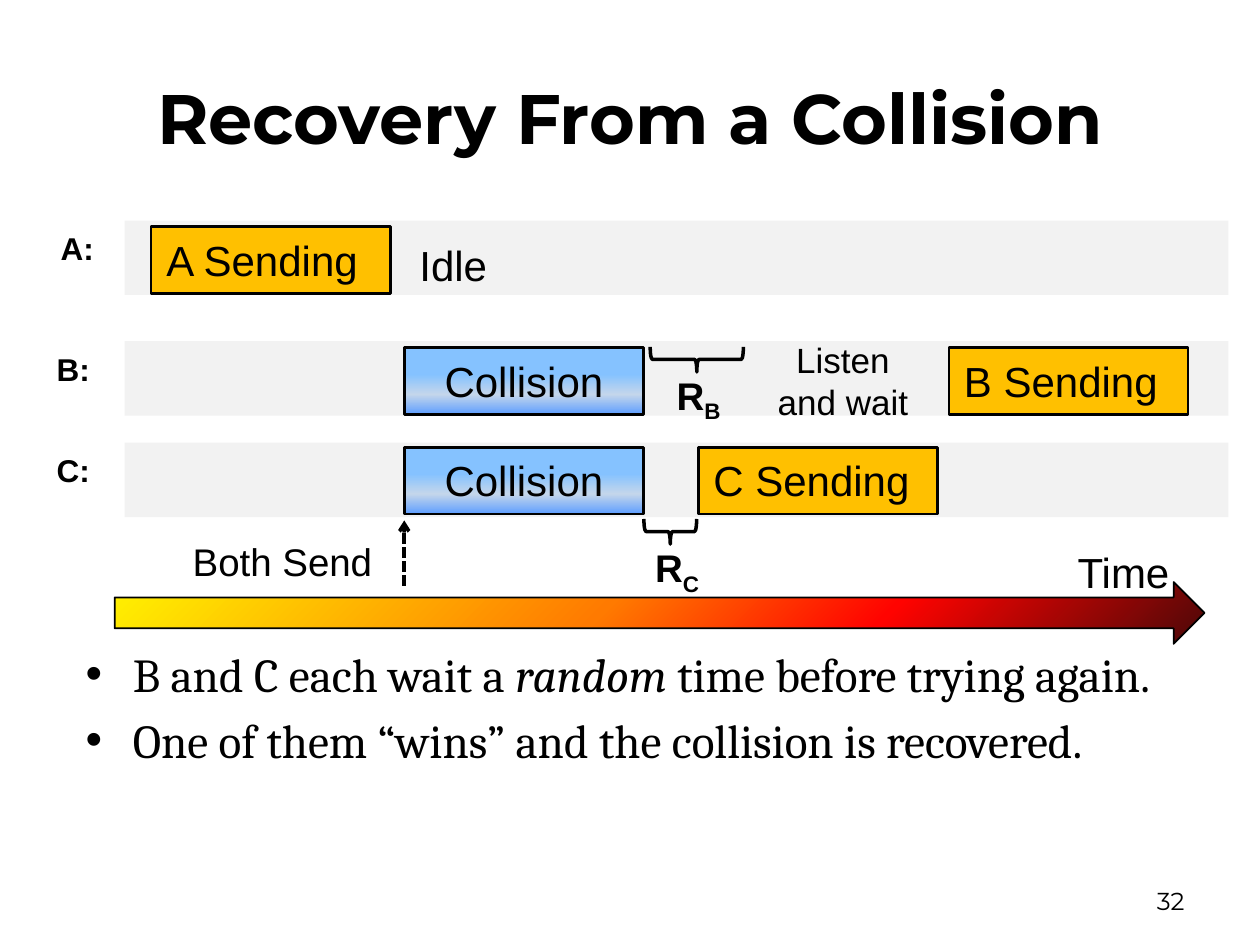
from lxml import etree
from pptx import Presentation
from pptx.dml.color import RGBColor
from pptx.enum.dml import MSO_LINE
from pptx.enum.shapes import MSO_CONNECTOR, MSO_SHAPE
from pptx.enum.text import MSO_ANCHOR, PP_ALIGN
from pptx.oxml.ns import qn
from pptx.util import Pt

LEFT, CENTER, RIGHT = PP_ALIGN.LEFT, PP_ALIGN.CENTER, PP_ALIGN.RIGHT
TOP, MIDDLE = MSO_ANCHOR.TOP, MSO_ANCHOR.MIDDLE
RECTANGLE, ARROW, BRACE = MSO_SHAPE.RECTANGLE, MSO_SHAPE.RIGHT_ARROW, MSO_SHAPE.RIGHT_BRACE

THEME = {
    "title_font": "Montserrat", "body_font": "Cambria", "label_font": "Arial",
    "title": 40, "body": 27, "box": 24, "note": 22, "wait": 20, "row": 18, "number": 14,
    "ink": "000000", "lane": "F2F2F2", "sending": "FFC000",
    "collision": [(40, "85C2FF"), (70, "C4D6EB"), (100, "5E9EFF")],
    "time": [(0, "FFF200"), (45, "FF7A00"), (70, "FF0300"), (100, "4D0808")],
}

TITLE = "Recovery From a Collision"
# Station, label left, lane top, box top, boxes as (left, text, kind)
STATIONS = [
    ("A:", 26, 126, 129.6, [(86.4, "A Sending", "sending")]),
    ("B:", 23.8, 195, 198.7, [(231, "Collision", "collision"), (542.2, "B Sending", "sending")]),
    ("C:", 23.8, 253, 255.6, [(231, "Collision", "collision"), (399, "C Sending", "sending")]),
]
# Runs (text, style), left, top, width, height, size, alignment
NOTES = [
    ([("Idle", "")], 231, 132.5, 75.6, 38, "box", LEFT),
    ([("Listen and wait", "")], 428.4, 189.4, 106.6, 57.6, "wait", CENTER),
    ([("Both Send", "")], 101.5, 303, 197.3, 35.3, "note", LEFT),
    ([("R", "bold"), ("B", "subscript")], 378, 208, 53.3, 35.3, "note", LEFT),
    ([("R", "bold"), ("C", "subscript")], 365.8, 306.7, 53.3, 35.3, "note", LEFT),
]
# Horizontal span and top of each waiting time
WAITS = [(371.5, 53.3, 198.2), (367.9, 30.2, 296.6)]
BULLETS = [
    [("B and C each wait a ", ""), ("random", "italic"), (" time before trying again.", "")],
    [("One of them “wins” and the collision is recovered.", "")],
]
LANE_LEFT, LANE_WIDTH, LANE_HEIGHT = 71.3, 630.7, 42.5
BOX_WIDTH, BOX_HEIGHT = 136.8, 38.2
BRACE_DEPTH = 14.4
WIDE_INSETS, NORMAL_INSETS = (8.64, 4.32), (7.2, 3.6)


def color(value):
    return RGBColor.from_string(value)


def fill_gradient(shape, stops, clockwise_angle):
    shape.fill.gradient()
    shape.fill.gradient_angle = 360 - clockwise_angle
    stop_list = next(shape._element.iter(qn("a:gsLst")))
    for old_stop in list(stop_list):
        stop_list.remove(old_stop)
    for percent, value in stops:
        stop = etree.SubElement(stop_list, qn("a:gs"), pos=str(percent * 1000))
        etree.SubElement(stop, qn("a:srgbClr"), val=value)


def set_line(shape, width):
    shape.line.color.rgb = color(THEME["ink"])
    shape.line.width = Pt(width)


def add_shape(slide, kind, left, top, width, height):
    shape = slide.shapes.add_shape(kind, Pt(left), Pt(top), Pt(width), Pt(height))
    shape.shadow.inherit = False
    return shape


def write_paragraph(paragraph, runs, font, size, alignment=LEFT):
    paragraph.alignment = alignment
    paragraph.font.name = THEME[font]
    paragraph.font.size = Pt(THEME[size])
    paragraph.font.color.rgb = color(THEME["ink"])
    for text, style in runs:
        run = paragraph.add_run()
        run.text = text
        if style == "italic":
            run.font.italic = True
        elif style:
            run.font.bold = True
        if style == "subscript":
            run.font._element.set("baseline", "-25000")


def set_frame(frame, insets, anchor):
    frame.word_wrap = True
    frame.vertical_anchor = anchor
    frame.margin_left = frame.margin_right = Pt(insets[0])
    frame.margin_top = frame.margin_bottom = Pt(insets[1])


def add_text(slide, runs, left, top, width, height, size, alignment=LEFT,
             font="label_font", insets=WIDE_INSETS, anchor=TOP):
    box = slide.shapes.add_textbox(Pt(left), Pt(top), Pt(width), Pt(height))
    set_frame(box.text_frame, insets, anchor)
    write_paragraph(box.text_frame.paragraphs[0], runs, font, size, alignment)


def add_title(slide):
    title = slide.shapes.title
    title.left, title.top, title.width, title.height = Pt(36), Pt(21.6), Pt(648), Pt(90)
    set_frame(title.text_frame, NORMAL_INSETS, MIDDLE)
    write_paragraph(title.text_frame.paragraphs[0], [(TITLE, "bold")], "title_font", "title", CENTER)


def add_station(slide, name, label_left, lane_top, box_top, boxes):
    lane = add_shape(slide, RECTANGLE, LANE_LEFT, lane_top, LANE_WIDTH, LANE_HEIGHT)
    lane.fill.solid()
    lane.fill.fore_color.rgb = color(THEME["lane"])
    lane.line.fill.background()
    add_text(slide, [(name, "bold")], label_left, lane_top + 0.5, 83.5, 44, "row")
    for left, text, kind in boxes:
        box = add_shape(slide, RECTANGLE, left, box_top, BOX_WIDTH, BOX_HEIGHT)
        set_line(box, 1.5)
        if kind == "collision":
            fill_gradient(box, THEME["collision"], 90)
        else:
            box.fill.solid()
            box.fill.fore_color.rgb = color(THEME["sending"])
        set_frame(box.text_frame, WIDE_INSETS, TOP)
        write_paragraph(box.text_frame.paragraphs[0], [(text, "")], "label_font", "box",
                        CENTER if kind == "collision" else LEFT)


def add_wait_brace(slide, left, span, top):
    """Place a right brace so that a quarter turn makes it open upwards over the span."""
    brace = add_shape(slide, BRACE, left + (span - BRACE_DEPTH) / 2,
                      top + (BRACE_DEPTH - span) / 2, BRACE_DEPTH, span)
    brace.rotation = 90
    brace.fill.background()
    set_line(brace, 2)


def add_send_marker(slide):
    marker = slide.shapes.add_connector(MSO_CONNECTOR.STRAIGHT, Pt(231), Pt(334.8), Pt(231), Pt(297.4))
    set_line(marker, 2)
    marker.line.dash_style = MSO_LINE.SQUARE_DOT
    etree.SubElement(marker.line._get_or_add_ln(), qn("a:tailEnd"), type="arrow")
    etree.SubElement(marker._element.spPr, qn("a:effectLst"))


def add_time_axis(slide):
    axis = add_shape(slide, ARROW, 65.5, 332.6, 622.8, 35.3)
    fill_gradient(axis, THEME["time"], 45)
    set_line(axis, 1)
    add_text(slide, [("Time", "")], 511.9, 308.9, 163.4, 36.7, "box", RIGHT, insets=NORMAL_INSETS)


def add_bullets(slide):
    box = slide.shapes.add_textbox(Pt(41.8), Pt(365), Pt(648), Pt(84.2))
    frame = box.text_frame
    set_frame(frame, NORMAL_INSETS, TOP)
    for index, runs in enumerate(BULLETS):
        paragraph = frame.paragraphs[0] if index == 0 else frame.add_paragraph()
        properties = paragraph._p.get_or_add_pPr()
        properties.set("marL", str(Pt(27)))
        properties.set("indent", str(-Pt(27)))
        etree.SubElement(properties, qn("a:buFont"), typeface=THEME["label_font"])
        etree.SubElement(properties, qn("a:buChar"), char="•")
        if index:
            paragraph.space_before = Pt(5.4)
        write_paragraph(paragraph, runs, "body_font", "body")


def main():
    presentation = Presentation()
    presentation.slide_width, presentation.slide_height = Pt(720), Pt(540)
    slide = presentation.slides.add_slide(presentation.slide_layouts[5])
    add_title(slide)
    for station in STATIONS:
        add_station(slide, *station)
    for wait in WAITS:
        add_wait_brace(slide, *wait)
    add_time_axis(slide)
    add_send_marker(slide)
    for note in NOTES:
        add_text(slide, *note)
    add_bullets(slide)
    add_text(slide, [("32", "")], 516.2, 500.4, 167.8, 28.8, "number", RIGHT,
             "title_font", NORMAL_INSETS, MIDDLE)
    presentation.save("out.pptx")


if __name__ == "__main__":
    main()
